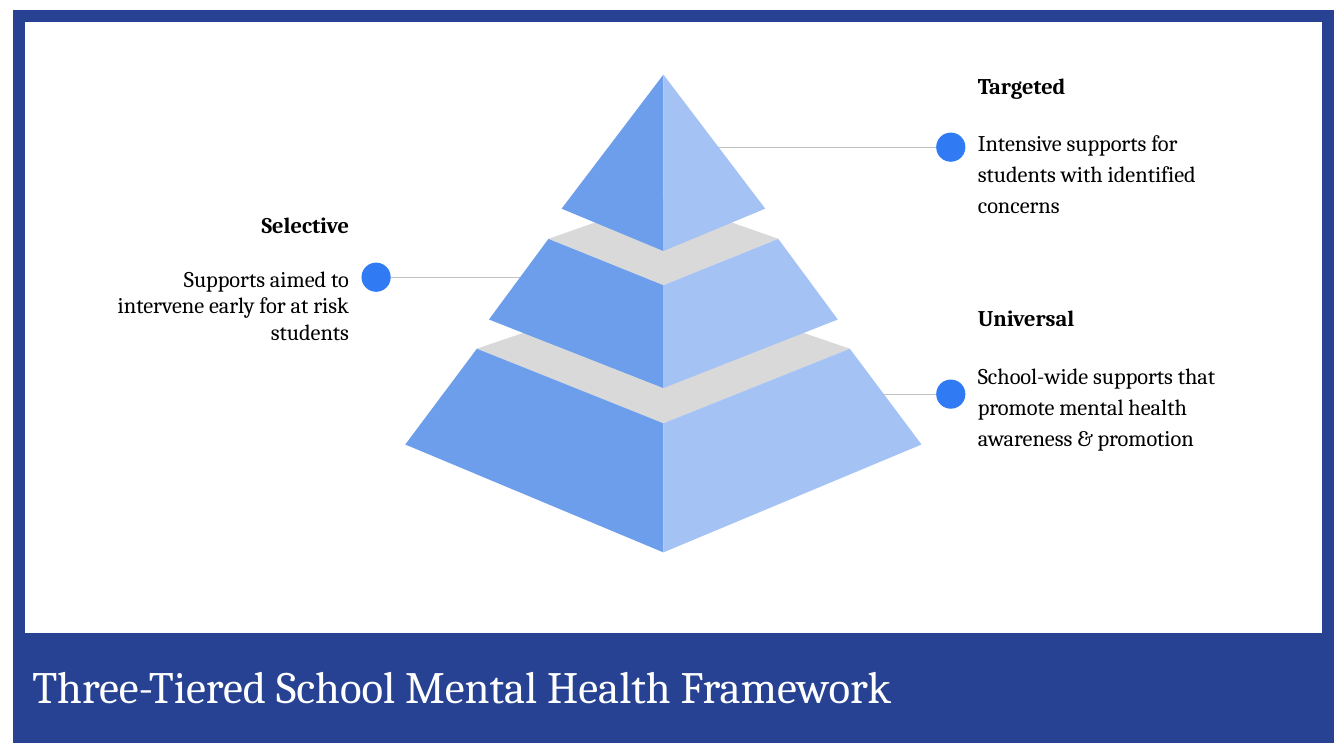
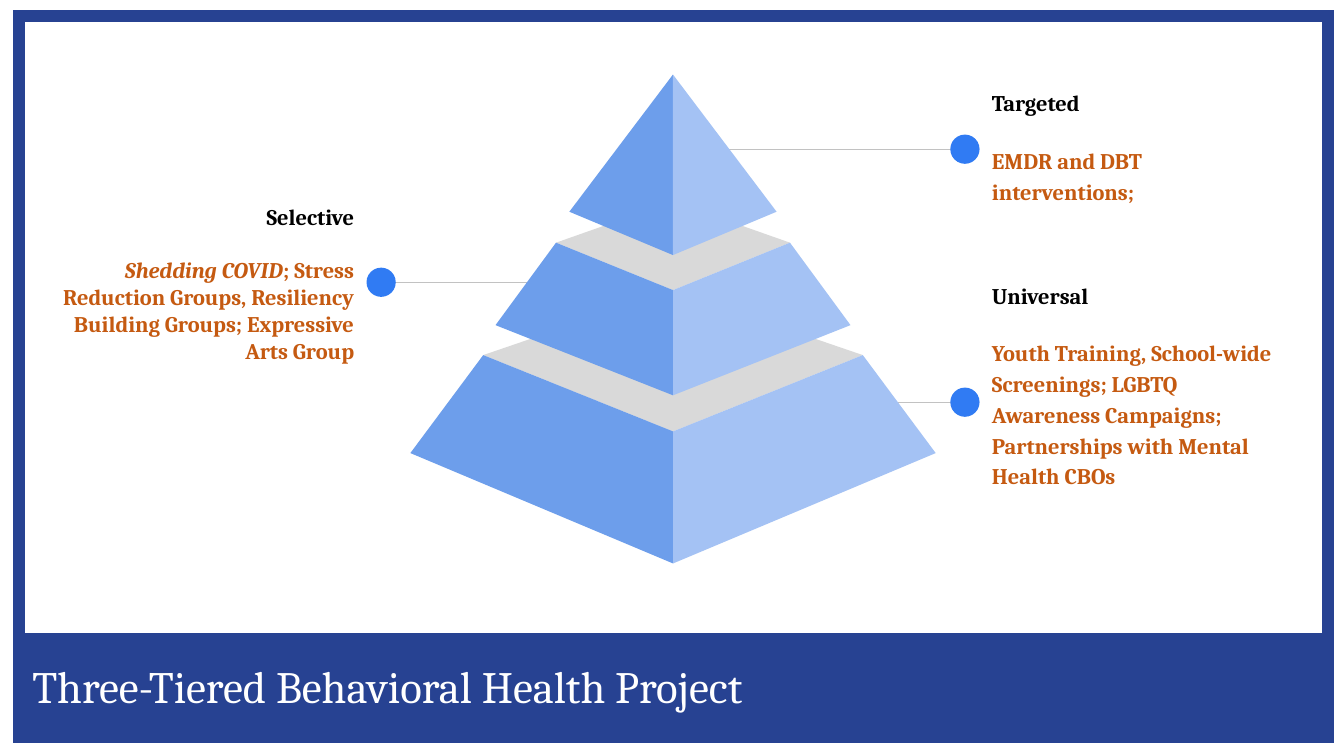
from pptx import Presentation
from pptx.dml.color import RGBColor as RGB
from pptx.enum.shapes import MSO_CONNECTOR as Line, MSO_SHAPE as Shape
from pptx.enum.text import MSO_ANCHOR as Anchor, PP_ALIGN as Align
from pptx.oxml.ns import qn
from pptx.util import Inches, Pt
from lxml import etree

HUES = {
    "navy": "274292", "dot": "307BF3", "rule": "C2C2C2",
    "dark": "6D9EEB", "light": "A4C2F4", "lid": "D9D9D9",
    "black": "000000", "white": "FFFFFF", "orange": "C55A11",
}
FONT = "Cambria"
DOT, GAP = 0.29, 0.17  # dot width, label edge to dot centre

# Each tier: shoulder half-width and y, front y, base half-width and y,
# bottom y, back of lid y (None for the tip), in a BASE-sized box
BASE = (5.12, 4.74)
TIERS = [
    (1.85, 2.72, 3.46, 2.56, 3.67, 4.74, 2.09),
    (1.14, 1.63, 2.09, 1.73, 2.43, 3.11, 1.23),
    (0, 0, 0, 1.01, 1.33, 1.75, None),
]


def hue(name):
    return RGB.from_string(HUES[name])


def paint(shape, fill=None, line=None, width=1):
    shape.shadow.inherit = False
    if fill:
        shape.fill.solid()
        shape.fill.fore_color.rgb = hue(fill)
    else:
        shape.fill.background()
    if line:
        shape.line.color.rgb = hue(line)
        shape.line.width = Pt(width)
        # Square corners
        etree.SubElement(shape.line._ln, qn("a:miter"), lim="800000")
    else:
        shape.line.fill.background()


def write(par, text, size=16, color="black", bold=False, italic=False):
    run = par.add_run()
    run.text = text
    font = run.font
    font.name, font.size = FONT, Pt(size)
    font.bold, font.italic = bold, italic
    font.color.rgb = hue(color)


def setup(frame, inset):
    frame.word_wrap = True
    frame.vertical_anchor = Anchor.MIDDLE
    frame.margin_left = frame.margin_right = Inches(inset)
    frame.margin_top = frame.margin_bottom = Inches(inset)


def callout(slide, box, y, tip, head, parts, left=False):
    """Label in box, with a dot beside it and a rule to the pyramid."""
    x, top, wide, high = box
    mid = x + wide + GAP if left else x - GAP

    # Rule
    rule = slide.shapes.add_connector(
        Line.STRAIGHT, Inches(tip), Inches(y), Inches(mid), Inches(y))
    rule.line.color.rgb = hue("rule")
    rule.line.width = Pt(0.75)
    etree.SubElement(rule._element.spPr, qn("a:effectLst"))

    # Label
    frame = slide.shapes.add_textbox(*map(Inches, box)).text_frame
    setup(frame, 0.1)
    title, body = frame.paragraphs[0], frame.add_paragraph()
    title.alignment = body.alignment = Align.RIGHT if left else Align.LEFT
    write(title, head, bold=True)
    body.space_before = Pt(19)
    body.line_spacing = 1.0 if left else 1.15
    for text, style in parts:
        write(body, text, **style)

    # Dot
    dot = slide.shapes.add_shape(
        Shape.OVAL, Inches(mid - DOT / 2), Inches(y - DOT / 2),
        Inches(DOT), Inches(DOT))
    paint(dot, "dot")


def pyramid(slide, box):
    """Three tiers, widest first, scaled to fill box."""
    x, top, wide, high = box
    mid, sx, sy = x + wide / 2, wide / BASE[0], high / BASE[1]

    def face(fill, *points):
        spots = [(Inches(mid + px * sx), Inches(top + py * sy))
                 for px, py in points]
        pen = slide.shapes.build_freeform(*spots[0])
        pen.add_line_segments(spots[1:], close=True)
        paint(pen.convert_to_shape(), fill)

    for edge, rim, front, foot, base, low, back in TIERS:
        if back is not None:
            face("lid", (-edge, rim), (0, front), (edge, rim), (0, back))
        for side, fill in ((-1, "dark"), (1, "light")):
            face(fill, (side * edge, rim), (side * foot, base),
                 (0, low), (0, front))


def border(slide, title):
    """Title band and frame shared by the slides."""
    x, wide = Inches(0.19), Inches(12.98)
    band = slide.shapes.add_shape(
        Shape.RECTANGLE, x, Inches(6.28), wide, Inches(1.05))
    paint(band, "navy")
    setup(band.text_frame, 0.13)
    par = band.text_frame.paragraphs[0]
    par.alignment = Align.LEFT
    write(par, title, size=32, color="white")
    edge = slide.shapes.add_shape(
        Shape.RECTANGLE, x, Inches(0.16), wide, Inches(7.15))
    paint(edge, line="navy", width=8.5)


def build(deck, title, box, notes):
    slide = deck.slides.add_slide(deck.slide_layouts[6])
    for note in notes:
        callout(slide, *note)
    pyramid(slide, box)
    border(slide, title)


def main():
    deck = Presentation()
    deck.slide_width, deck.slide_height = Inches(13.33), Inches(7.5)
    plain = {}
    bold = {"color": "orange", "bold": True}

    build(deck, "Three-Tiered School Mental Health Framework",
          (4.02, 0.74, 5.12, 4.74), [
              ((9.6, 2.87, 2.72, 1.75), 3.91, 8.72, "Universal",
               [("School-wide supports that promote mental health "
                 "awareness & promotion", plain)]),
              ((0.84, 1.75, 2.72, 2.02), 2.75, 5.21, "Selective",
               [("Supports aimed to intervene early for at risk students",
                 plain)], True),
              ((9.6, 0.43, 2.72, 2.02), 1.46, 7.07, "Targeted",
               [("Intensive supports for students with identified concerns",
                 plain)]),
          ])

    build(deck, "Three-Tiered Behavioral Health Project",
          (4.07, 0.74, 5.21, 4.85), [
              ((9.74, 2.93, 3.1, 1.79), 3.99, 8.85, "Universal",
               [("Youth Training, School-wide Screenings; LGBTQ Awareness "
                 "Campaigns; Partnerships with Mental Health CBOs", bold)]),
              ((0.52, 1.78, 3.09, 2.06), 2.8, 5.28, "Selective",
               [("Shedding COVID", {**bold, "italic": True}),
                ("; Stress Reduction Groups, Resiliency Building Groups; "
                 "Expressive Arts Group", bold)], True),
              ((9.74, 0.43, 2.77, 2.06), 1.48, 7.18, "Targeted",
               [("EMDR and DBT interventions;", bold)]),
          ])

    deck.save("out.pptx")


if __name__ == "__main__":
    main()
